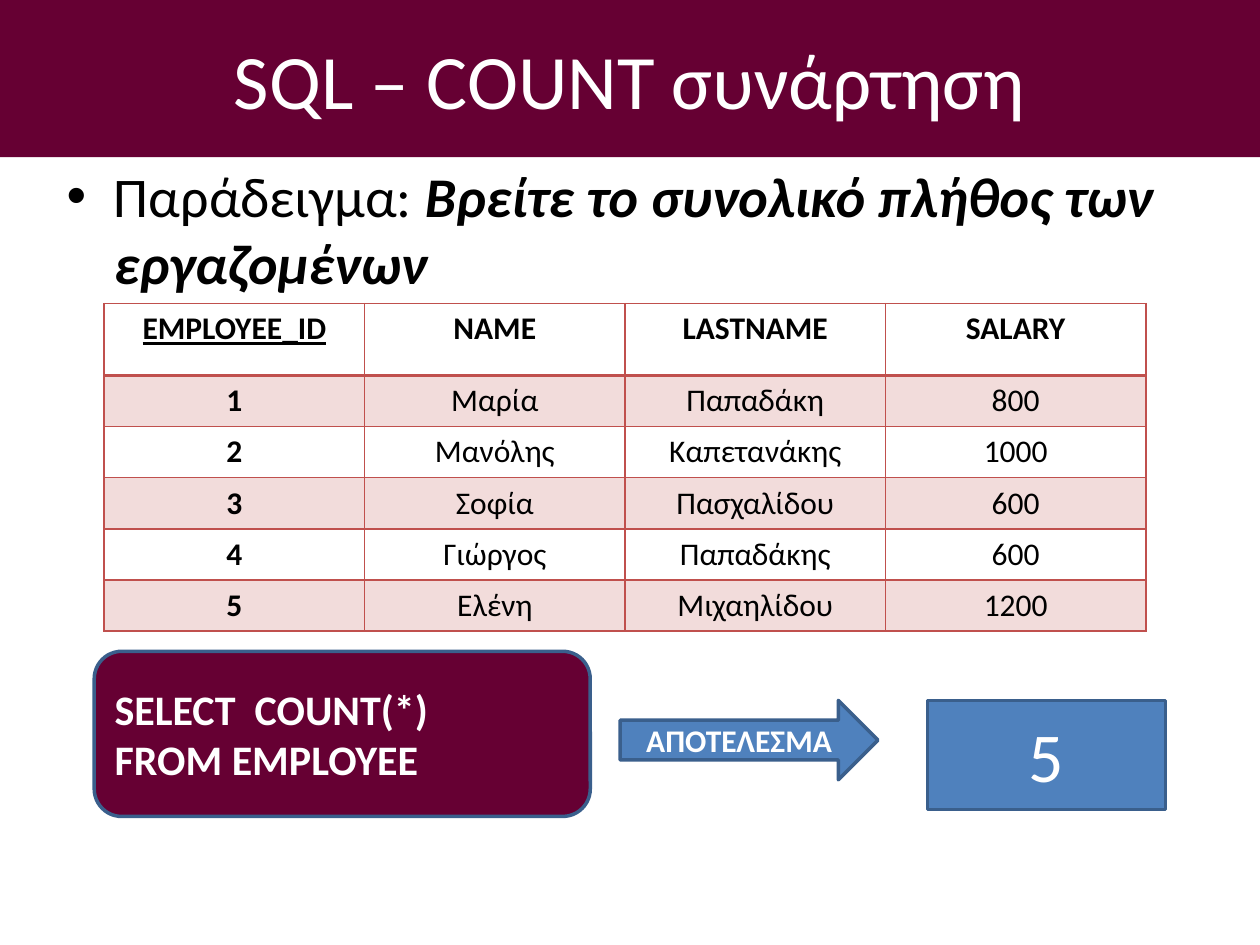
from lxml.etree import SubElement
from pptx import Presentation
from pptx.dml.color import RGBColor
from pptx.enum.shapes import MSO_SHAPE as Shape
from pptx.enum.text import MSO_ANCHOR as Anchor, PP_ALIGN as Align
from pptx.oxml.ns import qn
from pptx.util import Cm, Pt

FONT = "Calibri"
PLUM, BLUE, NAVY, RED = "660033", "4F81BD", "3A5F8C", "C0504D"
WHITE, BLACK = "FFFFFF", "000000"

HEADERS = ["EMPLOYEE_ID", "NAME", "LASTNAME", "SALARY"]
EMPLOYEES = [
    ("1", "Μαρία", "Παπαδάκη", "800"),
    ("2", "Μανόλης", "Καπετανάκης", "1000"),
    ("3", "Σοφία", "Πασχαλίδου", "600"),
    ("4", "Γιώργος", "Παπαδάκης", "600"),
    ("5", "Ελένη", "Μιχαηλίδου", "1200"),
]


def rgb(color):
    return RGBColor.from_string(color)


def paint(fill, color):
    fill.solid()
    fill.fore_color.rgb = rgb(color)


def place(sp, left, top, width, height):
    box = dict(left=left, top=top, width=width, height=height)
    for name, value in box.items():
        setattr(sp, name, Cm(value))


def add_run(p, text, size, color, **formats):
    r = p.add_run()
    r.text = text
    r.font.color.rgb = rgb(color)
    for name, value in dict(name=FONT, size=Pt(size), **formats).items():
        setattr(r.font, name, value)


def add_box(slide, kind, box, fill, lines, size, align=Align.CENTER, bold=True):
    sp = slide.shapes.add_shape(kind, *map(Cm, box))
    sp.shadow.inherit = False
    paint(sp.fill, fill)
    sp.line.color.rgb = rgb(NAVY)
    sp.line.width = Pt(2)
    tf = sp.text_frame
    tf.word_wrap = True
    tf.vertical_anchor = Anchor.MIDDLE
    for i, line in enumerate(lines):
        p = tf.add_paragraph() if i else tf.paragraphs[0]
        p.alignment = align
        add_run(p, line, size, WHITE, bold=bold)


def add_solid(parent, color, alpha=None):
    solid = SubElement(parent, qn("a:solidFill"))
    clr = SubElement(solid, qn("a:srgbClr"), val=color)
    if alpha:
        SubElement(clr, qn("a:alpha"), val=str(alpha * 1000))


def style_cell(cell, header, banded):
    # Borders come before the fill in the cell properties
    tc_pr = cell._tc.get_or_add_tcPr()
    for side in "LRTB":
        width = Pt(2 if header and side == "B" else 1)
        add_solid(SubElement(tc_pr, qn(f"a:ln{side}"), w=str(width)), RED)
    if banded:
        add_solid(tc_pr, RED, alpha=20)
    else:
        cell.fill.background()


def add_employee_table(slide):
    rows = [HEADERS, *EMPLOYEES]
    frame = slide.shapes.add_table(len(rows), len(HEADERS),
                                   Cm(2.1), Cm(6.12), Cm(21), Cm(6.6))
    table = frame.table
    table.first_row = table.horz_banding = False
    for i, values in enumerate(rows):
        table.rows[i].height = Cm(1.03 if i else 1.45)
        for j, value in enumerate(values):
            cell = table.cell(i, j)
            style_cell(cell, header=i == 0, banded=i % 2 == 1)
            p = cell.text_frame.paragraphs[0]
            p.alignment = Align.CENTER
            add_run(p, value, 18, BLACK, bold=i == 0 or j == 0,
                    underline=i == 0 and j == 0)


def fill_title(sp):
    place(sp, 0, 0, 25.4, 3.17)
    paint(sp.fill, PLUM)
    tf = sp.text_frame
    tf.vertical_anchor = Anchor.MIDDLE
    p = tf.paragraphs[0]
    p.alignment = Align.CENTER
    add_run(p, "SQL – COUNT συνάρτηση", 44, WHITE)


def fill_body(sp):
    place(sp, 1.09, 3.12, 22.86, 12.57)
    p = sp.text_frame.paragraphs[0]
    add_run(p, "Παράδειγμα: ", 32, BLACK)
    add_run(p, "Βρείτε το συνολικό πλήθος των εργαζομένων", 32, BLACK,
            bold=True, italic=True)


def main():
    prs = Presentation()
    prs.slide_width, prs.slide_height = Cm(25.4), Cm(19.05)
    slide = prs.slides.add_slide(prs.slide_layouts[1])

    # Heading and example question
    fill_title(slide.shapes.title)
    fill_body(slide.placeholders[1])

    # Query, data and result
    add_box(slide, Shape.ROUNDED_RECTANGLE, (1.9, 13.13, 10, 3.33), PLUM,
            ["SELECT  COUNT(*)", "FROM EMPLOYEE"], 24, Align.LEFT)
    add_employee_table(slide)
    add_box(slide, Shape.RIGHT_ARROW, (12.5, 14.12, 5.2, 1.6), BLUE,
            ["ΑΠΟΤΕΛΕΣΜΑ"], 18)
    add_box(slide, Shape.RECTANGLE, (18.7, 14.12, 4.8, 2.2), BLUE,
            ["5"], 40, bold=False)

    prs.save("out.pptx")


if __name__ == "__main__":
    main()
